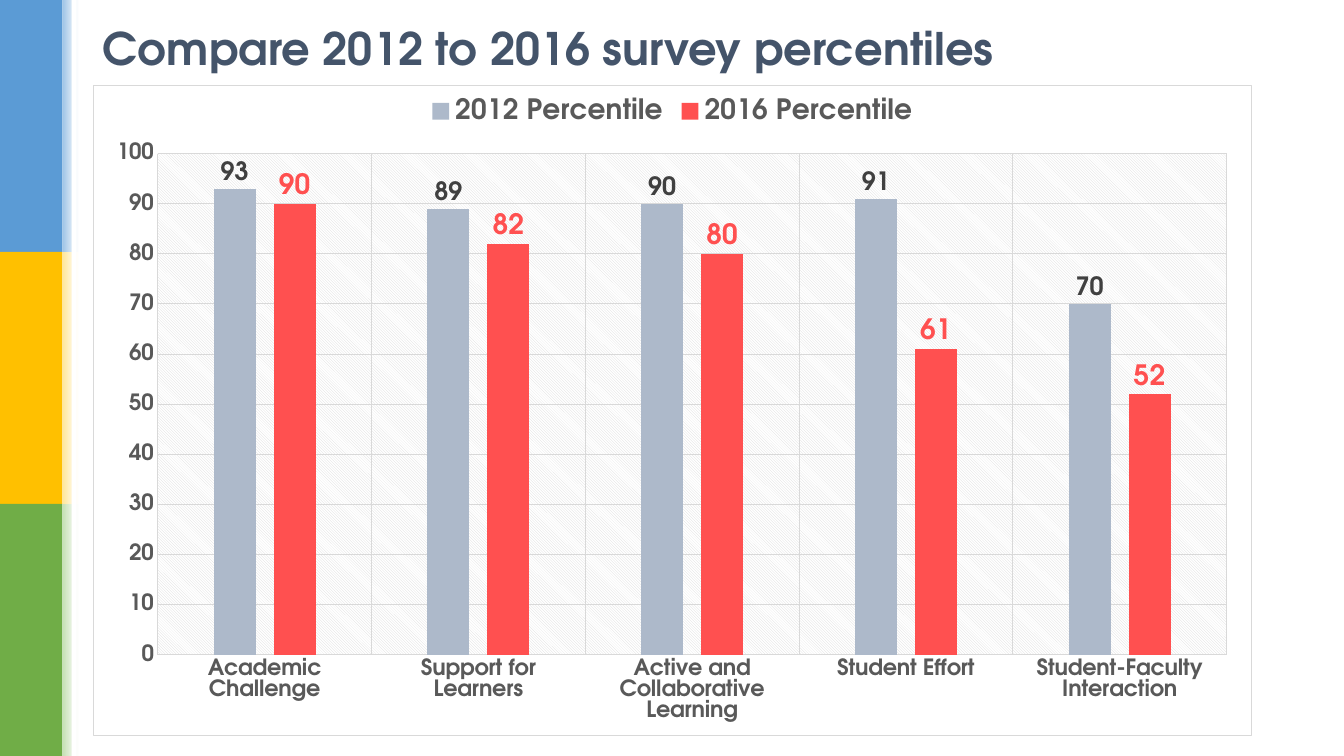
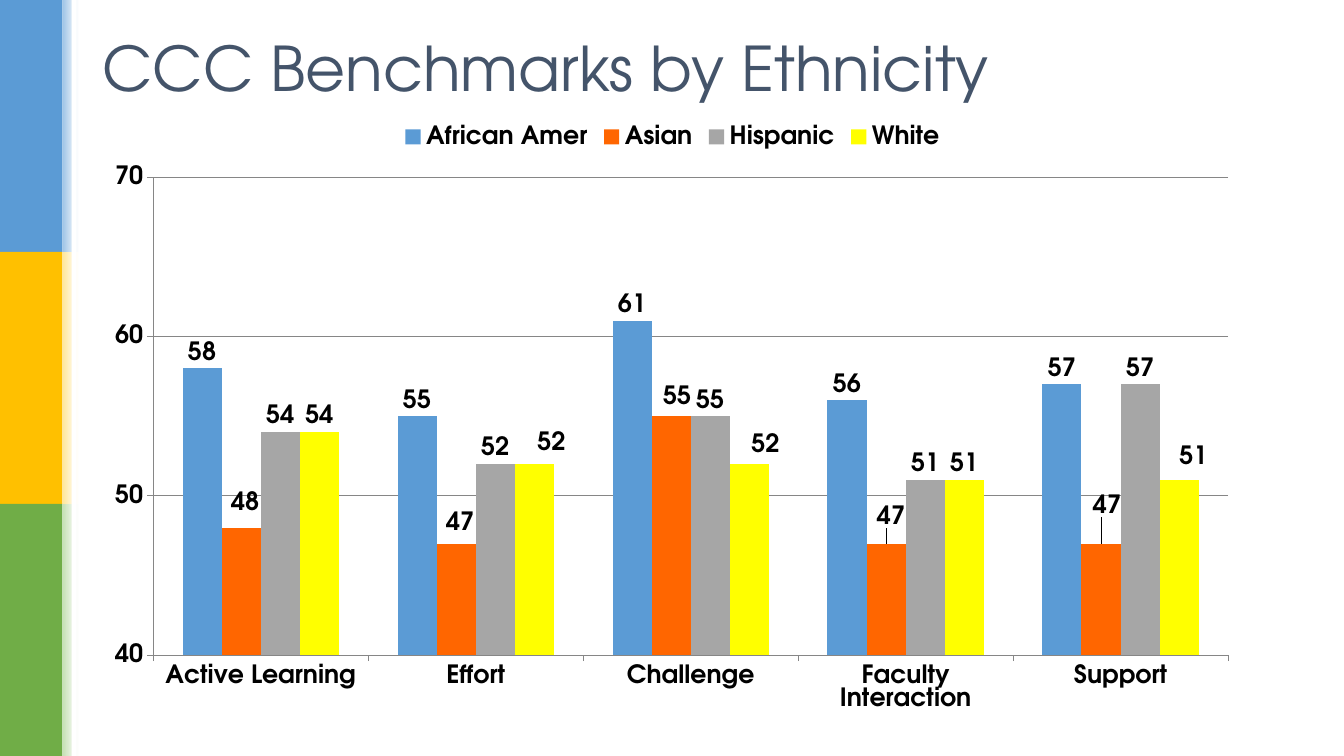
from lxml import etree
from pptx import Presentation
from pptx.chart.data import CategoryChartData
from pptx.dml.color import RGBColor
from pptx.enum.chart import XL_CHART_TYPE as Kind, XL_LABEL_POSITION as Spot
from pptx.enum.chart import XL_LEGEND_POSITION as Side, XL_TICK_MARK as Tick
from pptx.enum.shapes import MSO_SHAPE as Form
from pptx.enum.text import MSO_ANCHOR as Anchor, PP_ALIGN as Align
from pptx.oxml import parse_xml
from pptx.oxml.ns import nsdecls, qn
from pptx.util import Inches, Pt

FACE = "TeX Gyre Adventor"
NAVY, BLACK, WHITE = "44546A", "000000", "FFFFFF"
GREY, PALE, RULE = "595959", "D9D9D9", "868686"
BANDS = [("5B9BD5", "9DC3E6"), ("FFC000", "FFE699"), ("70AD47", "C5E0B4")]
BAND_W, FADE_W, BAND_H = 0.62, 0.16, 2.5
LEFT, WIDE = 0.92, 11.5

# Boxes are left, top, width, height in inches; fonts are size, colour.
# A series is name, colour, values, label font, label shifts by point.
SLIDES = [
    dict(
        title="Compare 2012 to 2016 survey percentiles",
        head=(0, 0.94, 32, True),
        top=0.84, high=6.46, plot=(1.56, 1.52, 10.61, 4.98),
        cats=["Academic Challenge", "Support for Learners",
              "Active and Collaborative Learning", "Student Effort",
              "Student-Faculty Interaction"],
        series=[
            ("2012 Percentile", "ADB9CA", [93, 89, 90, 91, 70],
             (18, "404040"), {}),
            ("2016 Percentile", "FF5050", [90, 82, 80, 61, 52],
             (20, "FF5050"), {}),
        ],
        gap=267, lap=-43, scale=(0, 100, 10),
        axis=(16, GREY), legend=(20, GREY), line=PALE, framed=True,
    ),
    dict(
        title="CCC Benchmarks by Ethnicity",
        head=(-0.06, 1.45, 44, False),
        top=1.12, high=6.06, plot=(1.52, 1.76, 10.66, 4.74),
        cats=["Active Learning", "Effort", "Challenge",
              "Faculty Interaction", "Support"],
        series=[
            ("African Amer", "5B9BD5", [58, 55, 61, 56, 57],
             (18, BLACK), {}),
            ("Asian", "FF6600", [48, 47, 55, 47, 47], (18, BLACK),
             {0: (0.04, -0.09), 1: (0.04, -0.05), 2: (0.06, -0.04),
              3: (0.05, -0.11), 4: (0.06, -0.22)}),
            ("Hispanic", "A6A6A6", [54, 52, 55, 51, 57], (18, BLACK), {}),
            ("White", "FFFF00", [54, 52, 52, 51, 51], (18, BLACK),
             {1: (0.17, -0.05), 2: (0.16, -0.03), 4: (0.14, -0.07)}),
        ],
        gap=150, lap=0, scale=(40, 70, 10),
        axis=(18, BLACK), legend=(18, BLACK), line=RULE, framed=False,
    ),
]


def rgb(code):
    return RGBColor.from_string(code)


def style(font, size, color, bold=True):
    font.name, font.size, font.bold = FACE, Pt(size), bold
    font.color.rgb = rgb(color)


def stroke(line, color):
    line.color.rgb = rgb(color)
    line.width = Pt(0.75)


def layout(**vals):
    """Build a manual chart layout from its ordered child values."""
    root = parse_xml(f"<c:layout {nsdecls('c')}><c:manualLayout/></c:layout>")
    for tag, val in vals.items():
        etree.SubElement(root[0], qn("c:" + tag)).set("val", str(val))
    return root


def solid(color):
    return f'<a:solidFill><a:srgbClr val="{color}"/></a:solidFill>'


def props(inner):
    """Build the fill and line properties of a chart area."""
    return parse_xml(f"<c:spPr {nsdecls('c', 'a')}>{inner}</c:spPr>")


def add_bands(slide, master):
    """Draw the side bands and move them behind the master's placeholders."""
    bars = []

    def bar(x, y, w, h):
        box = slide.shapes.add_shape(
            Form.RECTANGLE, Inches(x), Inches(y), Inches(w), Inches(h))
        box.shadow.inherit = False
        box.line.fill.background()
        bars.append(box)
        return box.fill

    for row, (deep, light) in enumerate(BANDS):
        y = row * BAND_H
        fill = bar(0, y, BAND_W, BAND_H)
        fill.solid()
        fill.fore_color.rgb = rgb(deep)
        fade = bar(BAND_W, y, FADE_W, BAND_H)
        fade.gradient()
        fade.gradient_angle = 0
        for stop, color in zip(fade.gradient_stops, (light, WHITE)):
            stop.color.rgb = rgb(color)
    edge = bar(0.71, 0, 0.05, 7.5)
    edge.solid()
    edge.fore_color.rgb = rgb(WHITE)

    tree = master.placeholders[0].element.getparent()
    for num, box in enumerate(bars):
        box.element.nvSpPr.cNvPr.set("id", str(20 + num))
        tree.insert(2 + num, box.element)


def add_title(slide, text, top, high, size, bold):
    title = slide.shapes.title
    title.left, title.top = Inches(LEFT), Inches(top)
    title.width, title.height = Inches(WIDE), Inches(high)
    frame = title.text_frame
    frame.vertical_anchor = Anchor.MIDDLE
    para = frame.paragraphs[0]
    para.alignment = Align.LEFT
    run = para.add_run()
    run.text = text
    style(run.font, size, NAVY, bold)


def set_axes(chart, item):
    cat, val = chart.category_axis, chart.value_axis
    val.minimum_scale, val.maximum_scale, val.major_unit = item["scale"]
    for axis in (cat, val):
        axis.major_tick_mark = Tick.NONE if item["framed"] else Tick.OUTSIDE
        axis.minor_tick_mark = Tick.NONE
        style(axis.tick_labels.font, *item["axis"])
        stroke(axis.format.line, item["line"])
    stroke(val.major_gridlines.format.line, item["line"])
    cat.has_major_gridlines = item["framed"]
    if item["framed"]:
        stroke(cat.major_gridlines.format.line, item["line"])
        val.format.line.fill.background()


def set_labels(series, font, shifts, high):
    labels = series.data_labels
    labels.show_value = True
    labels.number_format, labels.number_format_is_linked = "0", False
    labels.position = Spot.OUTSIDE_END
    style(labels.font, *font)
    for idx in shifts:
        label = series.points[idx].data_label
        label.position = Spot.OUTSIDE_END
        style(label.font, *font)
    nodes = series._element.xpath("c:dLbls/c:dLbl")
    for node, (x, y) in zip(nodes, shifts.values()):
        node.insert(1, layout(x=round(x / WIDE, 4), y=round(y / high, 4)))


def set_areas(chart, item):
    """Place the plot area; on a framed chart, fill and border it."""
    root = chart._chartSpace
    area = root.find(".//" + qn("c:plotArea"))
    for old in area.findall(qn("c:layout")):
        area.remove(old)
    x, y, w, h = item["plot"]
    high = item["high"]
    area.insert(0, layout(
        layoutTarget="inner", xMode="edge", yMode="edge",
        x=round((x - LEFT) / WIDE, 4), y=round((y - item["top"]) / high, 4),
        w=round(w / WIDE, 4), h=round(h / high, 4)))
    if item["framed"]:
        area.append(props(
            '<a:pattFill prst="ltDnDiag">'
            f'<a:fgClr><a:srgbClr val="{PALE}"/></a:fgClr>'
            f'<a:bgClr><a:srgbClr val="{WHITE}"/></a:bgClr></a:pattFill>'))
        root.find(qn("c:chart")).addnext(props(
            solid(WHITE) + f'<a:ln w="{Pt(0.75)}">{solid(PALE)}</a:ln>'))


def add_bars(slide, item):
    data = CategoryChartData(number_format="0")
    data.categories = item["cats"]
    for name, _, vals, _, _ in item["series"]:
        data.add_series(name, vals)
    chart = slide.shapes.add_chart(
        Kind.COLUMN_CLUSTERED, Inches(LEFT), Inches(item["top"]),
        Inches(WIDE), Inches(item["high"]), data).chart
    style(chart.font, *item["axis"])
    chart.has_title = False
    chart.has_legend = True
    chart.legend.position = Side.TOP
    chart.legend.include_in_layout = False
    style(chart.legend.font, *item["legend"])
    plot = chart.plots[0]
    plot.gap_width, plot.overlap = item["gap"], item["lap"]
    plot.vary_by_categories = False
    for series, (_, color, _, font, shifts) in zip(plot.series, item["series"]):
        series.format.fill.solid()
        series.format.fill.fore_color.rgb = rgb(color)
        set_labels(series, font, shifts, item["high"])
    set_axes(chart, item)
    set_areas(chart, item)


def main():
    deck = Presentation()
    deck.slide_width, deck.slide_height = Inches(13.33), Inches(7.5)
    for num, item in enumerate(SLIDES):
        slide = deck.slides.add_slide(deck.slide_layouts[5])
        if num == 0:
            add_bands(slide, deck.slide_master)
        add_title(slide, item["title"], *item["head"])
        add_bars(slide, item)
    deck.save("out.pptx")


if __name__ == "__main__":
    main()
